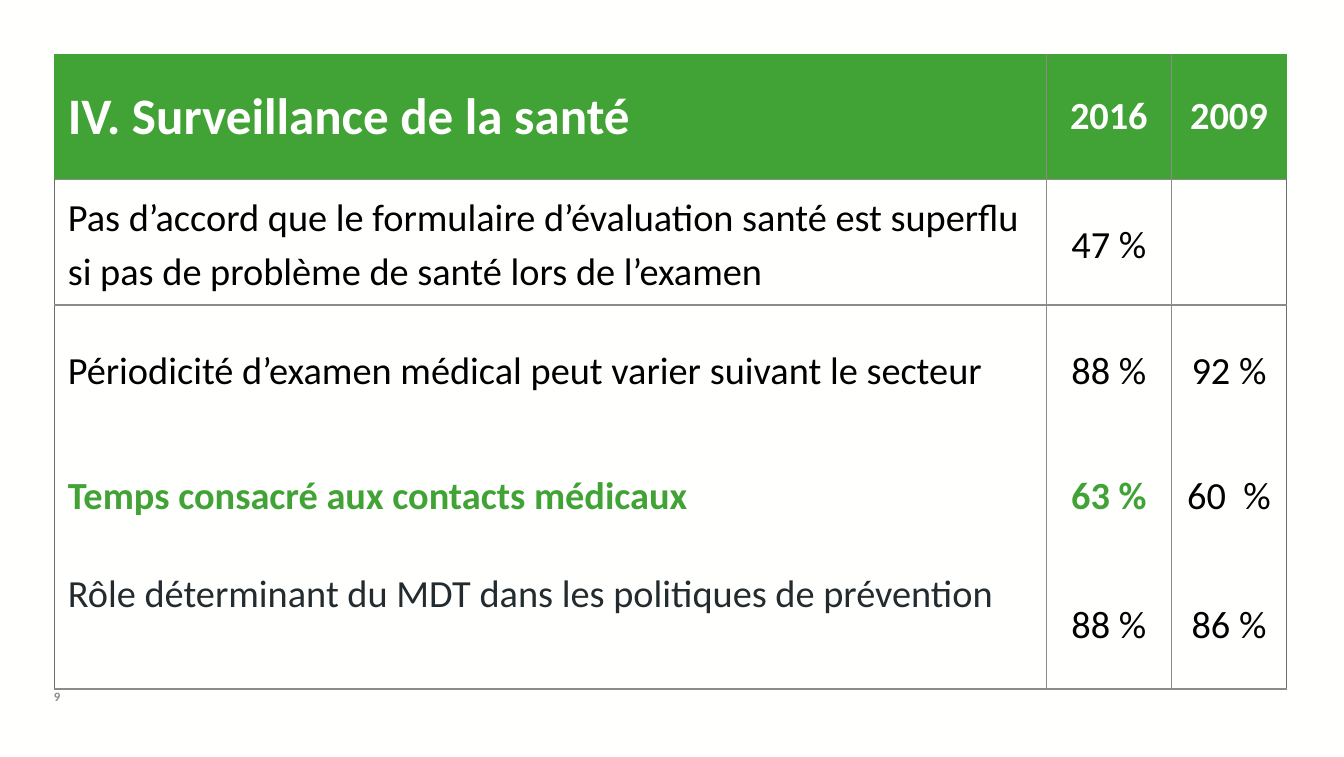
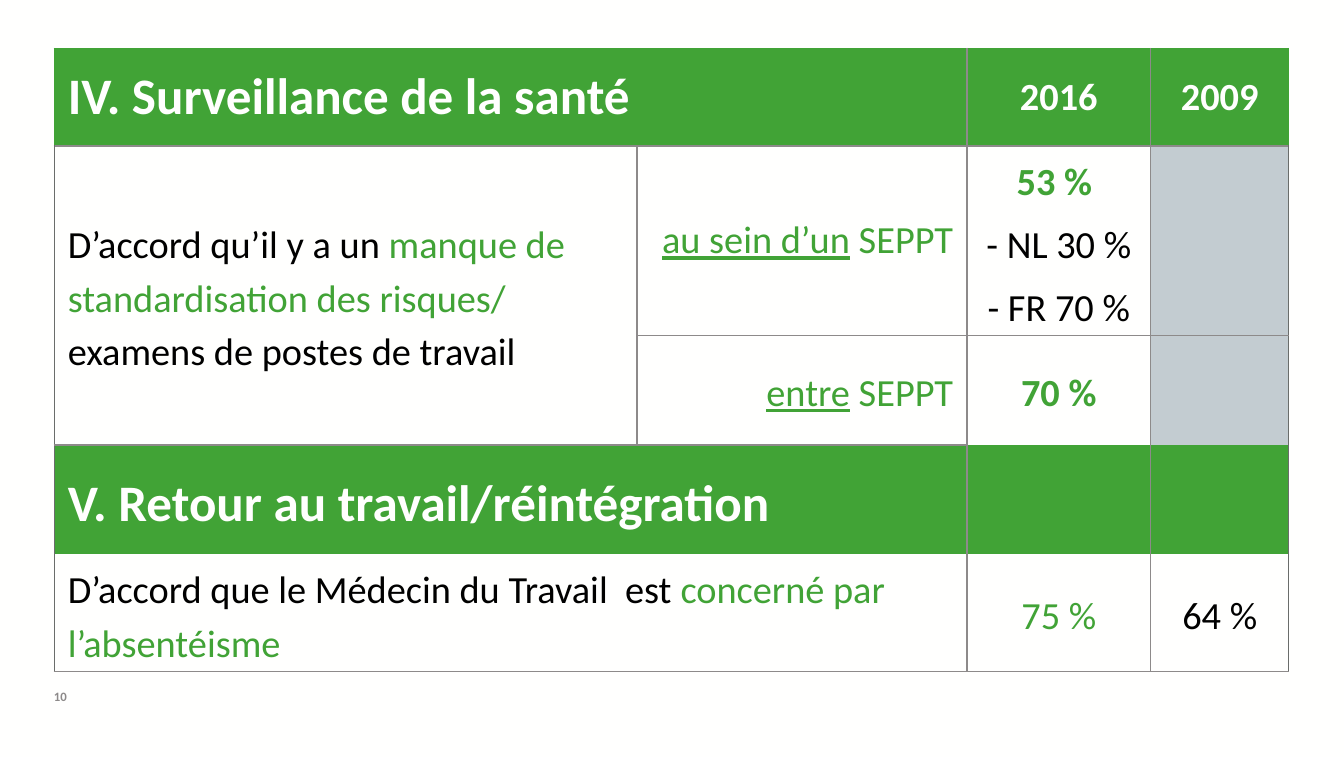
from dataclasses import dataclass
from typing import Optional

from lxml.etree import SubElement
from pptx import Presentation
from pptx.dml.color import RGBColor
from pptx.enum.text import MSO_ANCHOR, PP_ALIGN
from pptx.oxml.ns import qn
from pptx.util import Inches, Pt


@dataclass(frozen=True)
class Theme:
    font: str = "Calibri"
    paper: str = "FFFFFE"
    green: str = "41A336"
    ink: str = "000000"
    slate: str = "242B2F"
    rule: str = "8D8A8A"
    frame: str = "6A6D6B"
    empty: str = "C3CCD1"
    heading_size: int = 32
    body_size: int = 24
    number_size: int = 8
    left: float = 0.47
    no_grid_style: str = "{2D5ABB26-0587-4C30-8999-92F81FD0307C}"


THEME = Theme()
LEFT, CENTER, RIGHT = PP_ALIGN.LEFT, PP_ALIGN.CENTER, PP_ALIGN.RIGHT


@dataclass(frozen=True)
class Run:
    text: str
    color: str = THEME.ink
    bold: bool = False
    underline: bool = False
    size: int = THEME.body_size


@dataclass(frozen=True)
class Entry:
    """Content of one table cell: each line is a tuple of runs."""
    lines: tuple = ()
    align: PP_ALIGN = LEFT
    fill: Optional[str] = None
    spaced: bool = True
    bottom: float = 0.05
    span: tuple = (1, 1)


def green(text, **formats):
    return Run(text, THEME.green, **formats)


def white(text, size):
    return Run(text, THEME.paper, bold=True, size=size)


def statement(*runs, **formats):
    return Entry((runs,), **formats)


def share(*lines):
    return Entry(tuple((line,) for line in lines), CENTER)


def section(title, **formats):
    return statement(white(title, THEME.heading_size), fill=THEME.green, **formats)


def year(label):
    return statement(white(label, THEME.body_size), align=CENTER,
                     fill=THEME.green, spaced=False)


def years_header(title, **formats):
    return [section(title, spaced=False, **formats), year("2016"), year("2009")]


def add_run(paragraph, run):
    piece = paragraph.add_run()
    piece.text = run.text
    formats = {"name": THEME.font, "size": Pt(run.size),
               "bold": run.bold, "underline": run.underline}
    for name, value in formats.items():
        setattr(piece.font, name, value)
    piece.font.color.rgb = RGBColor.from_string(run.color)


def fill_cell(cell, entry):
    formats = {"vertical_anchor": MSO_ANCHOR.MIDDLE,
               "margin_left": Inches(0.12), "margin_right": Inches(0.12),
               "margin_top": Inches(0.05), "margin_bottom": Inches(entry.bottom)}
    for name, value in formats.items():
        setattr(cell, name, value)
    for index, line in enumerate(entry.lines):
        frame = cell.text_frame
        paragraph = frame.add_paragraph() if index else frame.paragraphs[0]
        paragraph.alignment = entry.align
        if entry.spaced:
            paragraph.line_spacing = 1.15
            paragraph.space_after = Pt(6)
        for run in line:
            add_run(paragraph, run)


def set_borders(cell, borders):
    """Draw borders given as {side tag: (colour, points)}, in schema order."""
    properties = cell._tc.get_or_add_tcPr()
    for side, (color, points) in borders.items():
        line = SubElement(properties, qn(f"a:{side}"), w=str(Pt(points)))
        solid = SubElement(line, qn("a:solidFill"))
        SubElement(solid, qn("a:srgbClr"), val=color)


def cell_borders(row, column, entry, row_count, column_count):
    rule = (THEME.rule, 1)
    outer = (THEME.frame if row else THEME.green, 0.5)
    last_column = column + entry.span[1] == column_count
    borders = {"lnL": rule if column else outer, "lnR": outer if last_column else rule}
    if row < 2:
        borders["lnT"] = rule if row else outer
    if row in (0, row_count - 1):
        borders["lnB"] = rule
    return borders


def add_survey_table(slide, top, widths, heights, rows):
    """Rows hold Entry values; None marks a place covered by a span."""
    table = slide.shapes.add_table(
        len(heights), len(widths), Inches(THEME.left), Inches(top),
        Inches(sum(widths)), Inches(sum(heights))).table
    table.first_row = table.horz_banding = False
    table._tbl.tblPr.find(qn("a:tableStyleId")).text = THEME.no_grid_style
    for column, width in zip(table.columns, widths):
        column.width = Inches(width)
    for row, height in zip(table.rows, heights):
        row.height = Inches(height)
    for r, entries in enumerate(rows):
        for c, entry in enumerate(entries):
            if entry is None:
                continue
            cell = table.cell(r, c)
            if entry.span != (1, 1):
                cell.merge(table.cell(r + entry.span[0] - 1, c + entry.span[1] - 1))
            fill_cell(cell, entry)
            set_borders(cell, cell_borders(r, c, entry, len(heights), len(widths)))
            if entry.fill:
                cell.fill.solid()
                cell.fill.fore_color.rgb = RGBColor.from_string(entry.fill)
            else:
                cell.fill.background()


def add_survey_slide(deck, number):
    slide = deck.slides.add_slide(deck.slide_layouts[6])
    slide.background.fill.solid()
    slide.background.fill.fore_color.rgb = RGBColor.from_string(THEME.paper)
    frame = slide.shapes.add_textbox(
        Inches(THEME.left), Inches(5.99), Inches(0.17), Inches(0.22)).text_frame
    for side in ("left", "top", "right", "bottom"):
        setattr(frame, f"margin_{side}", 0)
    add_run(frame.paragraphs[0],
            Run(number, THEME.rule, bold=True, size=THEME.number_size))
    return slide


def build_health_slide(deck):
    rows = [
        years_header("IV. Surveillance de la santé"),
        [statement(Run("Pas d’accord que le formulaire d’évaluation santé est superflu "
                       "si pas de problème de santé lors de l’examen")),
         share(Run("47 %")), Entry()],
        [statement(Run("Périodicité d’examen médical peut varier suivant le secteur")),
         share(Run("88 %")), share(Run("92 %"))],
        [statement(green("Temps consacré aux contacts médicaux", bold=True)),
         share(green("63 %", bold=True)), share(Run("60  %"))],
        [statement(Run("Rôle déterminant du MDT dans les politiques de prévention",
                       THEME.slate), bottom=0.6),
         share(Run("88 %")), share(Run("86 %"))],
    ]
    add_survey_table(add_survey_slide(deck, "9"), 0.47, [8.63, 1.09, 1],
                     [1.09] * 4 + [1.16], rows)


def build_return_slide(deck):
    title, *years = years_header("IV. Surveillance de la santé", span=(1, 2))
    blank_year = Entry(fill=THEME.empty)
    blank_band = Entry(fill=THEME.green)
    rows = [
        [title, None, *years],
        [statement(Run("D’accord qu’il y a un "),
                   green("manque de standardisation des risques/ "),
                   Run("examens de postes de travail"), span=(2, 1)),
         statement(green("au sein d’un", underline=True), green(" SEPPT"),
                   align=RIGHT, bottom=0.11),
         share(green("53 % ", bold=True), Run("- NL 30 %"), Run("- FR 70 %")),
         blank_year],
        [None,
         statement(green("entre", underline=True), green(" SEPPT"), align=RIGHT),
         share(green("70 %", bold=True)), blank_year],
        [section("V. Retour au travail/réintégration", span=(1, 2)), None,
         blank_band, blank_band],
        [statement(Run("D’accord que le Médecin du Travail  est "),
                   green("concerné par l’absentéisme"), span=(1, 2)), None,
         share(green("75 %")), share(Run("64 %"))],
    ]
    add_survey_table(add_survey_slide(deck, "10"), 0.42, [5.07, 2.87, 1.6, 1.2],
                     [0.85, 1.01] + [0.95] * 3, rows)


def main():
    deck = Presentation()
    deck.slide_width, deck.slide_height = Inches(11.69), Inches(6.58)
    build_health_slide(deck)
    build_return_slide(deck)
    deck.save("out.pptx")


if __name__ == "__main__":
    main()
